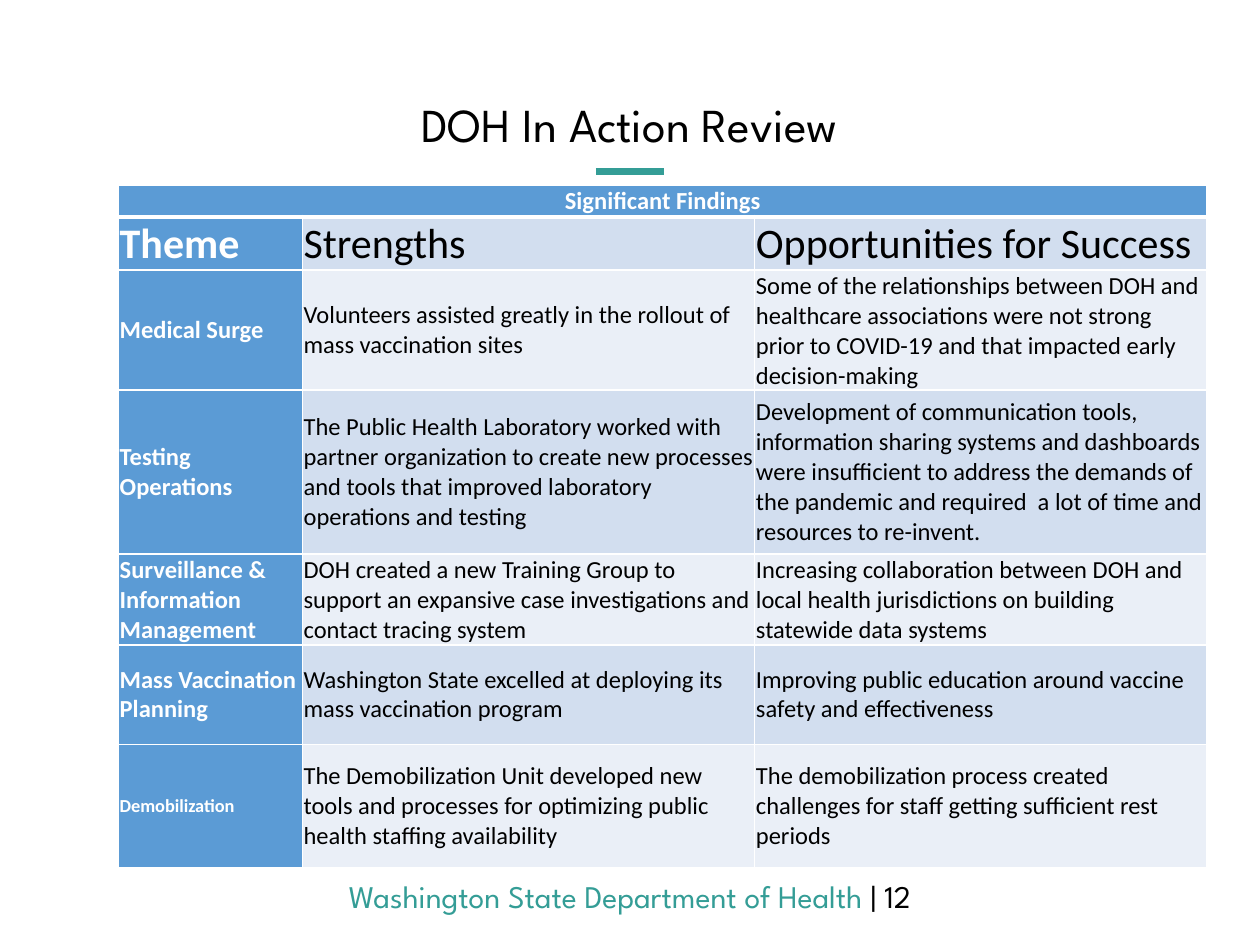
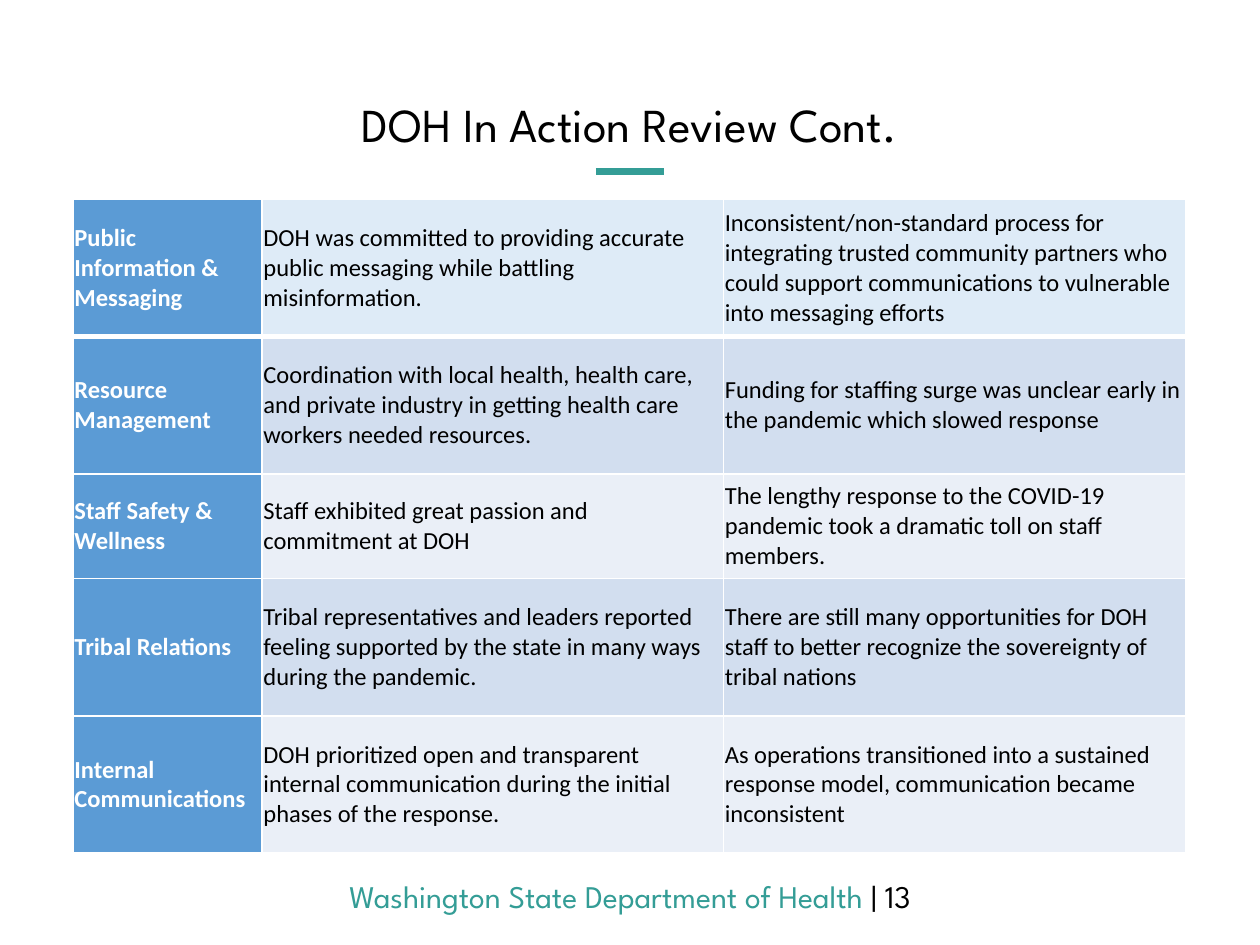
from lxml.etree import SubElement
from pptx import Presentation
from pptx.dml.color import RGBColor
from pptx.enum.shapes import MSO_CONNECTOR
from pptx.enum.text import MSO_ANCHOR, MSO_AUTO_SIZE, PP_ALIGN
from pptx.oxml.ns import qn
from pptx.util import Pt

TEAL = RGBColor(0x34, 0x9D, 0x96)
BLACK = RGBColor(0, 0, 0)
WHITE = RGBColor(0xFF, 0xFF, 0xFF)
THEME_BLUE = RGBColor(0x5B, 0x9B, 0xD5)
TOP_BLUE = RGBColor(0xDE, 0xEB, 0xF7)
BANDS = [RGBColor(0xEA, 0xEF, 0xF7), RGBColor(0xD2, 0xDE, 0xEF)]
HEADING_FONT = "League Spartan"
TABLE_FONT = "Calibri"
CELL_INSET = Pt(0.72)
CELL_FORMAT = {
    "margin_left": CELL_INSET, "margin_right": CELL_INSET,
    "margin_top": CELL_INSET, "margin_bottom": CELL_INSET,
}

REVIEWS = [
    {
        "title": "DOH In Action Review",
        "number": 12,
        "left": 67.7, "top": 105.8,
        "columns": [105.1, 258.5, 258.5],
        "heights": [17.3, 28.8, 65.5, 93.6, 49, 56.9, 70.6],
        "sizes": {"Theme": 24, "Strengths": 24, "Opportunities for Success": 24,
                  "Demobilization": 10.5},
        "findings": [
            ("Significant Findings", "", ""),
            ("Theme", "Strengths", "Opportunities for Success"),
            ("Medical Surge",
             "Volunteers assisted greatly in the rollout of mass vaccination sites",
             "Some of the relationships between DOH and healthcare associations were not "
             "strong prior to COVID-19 and that impacted early decision-making"),
            ("Testing Operations",
             "The Public Health Laboratory worked with partner organization to create new "
             "processes and tools that improved laboratory operations and testing",
             "Development of communication tools, information sharing systems and dashboards "
             "were insufficient to address the demands of the pandemic and required  a lot of "
             "time and resources to re-invent."),
            ("Surveillance & Information Management",
             "DOH created a new Training Group to support an expansive case investigations "
             "and contact tracing system",
             "Increasing collaboration between DOH and local health jurisdictions on building "
             "statewide data systems"),
            ("Mass Vaccination Planning",
             "Washington State excelled at deploying its mass vaccination program",
             "Improving public education around vaccine safety and effectiveness"),
            ("Demobilization",
             "The Demobilization Unit developed new tools and processes for optimizing public "
             "health staffing availability",
             "The demobilization process created challenges for staff getting sufficient rest "
             "periods"),
        ],
    },
    {
        "title": "DOH In Action Review Cont.",
        "number": 13,
        "left": 41.8, "top": 113.8,
        "columns": [108, 263.7, 264.2],
        "heights": [78.5, 78.5, 59.8, 78.5, 78.5],
        "sizes": {},
        "findings": [
            ("Public Information & Messaging",
             "DOH was committed to providing accurate public messaging while battling "
             "misinformation.",
             "Inconsistent/non-standard process for integrating trusted community partners who "
             "could support communications to vulnerable into messaging efforts"),
            ("Resource Management",
             "Coordination with local health, health care, and private industry in getting "
             "health care workers needed resources.",
             "Funding for staffing surge was unclear early in the pandemic which slowed "
             "response"),
            ("Staff Safety & Wellness",
             "Staff exhibited great passion and commitment at DOH",
             "The lengthy response to the COVID-19 pandemic took a dramatic toll on staff "
             "members."),
            ("Tribal Relations",
             "Tribal representatives and leaders reported feeling supported by the state in "
             "many ways during the pandemic.",
             "There are still many opportunities for DOH staff to better recognize the "
             "sovereignty of tribal nations"),
            ("Internal Communications",
             "DOH prioritized open and transparent internal communication during the initial "
             "phases of the response.",
             "As operations transitioned into a sustained response model, communication became "
             "inconsistent"),
        ],
    },
]


def add_run(paragraph, text, color, **font_format):
    run = paragraph.add_run()
    run.text = text
    run.font.color.rgb = color
    for attribute, value in font_format.items():
        setattr(run.font, attribute, value)


def add_borders(cell, top, bottom):
    """Draw white cell borders; top and bottom are widths in points."""
    for side, width in {"lnL": 1, "lnR": 1, "lnT": top, "lnB": bottom}.items():
        border = SubElement(cell._tc.get_or_add_tcPr(), qn(f"a:{side}"), w=str(Pt(width)))
        fill = SubElement(border, qn("a:solidFill"))
        SubElement(fill, qn("a:srgbClr"), val=str(WHITE))


prs = Presentation()
prs.slide_width, prs.slide_height = Pt(720), Pt(540)

for review in REVIEWS:
    slide = prs.slides.add_slide(prs.slide_layouts.get_by_name("Title Only"))

    accent = slide.shapes.add_connector(
        MSO_CONNECTOR.STRAIGHT, Pt(340.5), Pt(98), Pt(379.5), Pt(98))
    accent.line.color.rgb = TEAL
    accent.line.width = Pt(4)
    SubElement(accent._element.spPr, qn("a:effectLst"))

    footer = slide.shapes.add_textbox(Pt(0), Pt(497.5), Pt(720), Pt(28.8)).text_frame
    footer.word_wrap = True
    footer.paragraphs[0].alignment = PP_ALIGN.CENTER
    for text, color in [("Washington State Department of Health ", TEAL),
                        (f"| {review['number']}", BLACK)]:
        add_run(footer.paragraphs[0], text, color, name=HEADING_FONT, size=Pt(18))

    title = slide.shapes.title
    title.left, title.top, title.width, title.height = Pt(0), Pt(53.3), Pt(719.3), Pt(38.2)
    title.text_frame.auto_size = MSO_AUTO_SIZE.NONE
    title.text_frame.vertical_anchor = MSO_ANCHOR.MIDDLE
    heading = title.text_frame.paragraphs[0]
    heading.alignment = PP_ALIGN.CENTER
    heading.line_spacing = 0.9
    add_run(heading, review["title"], BLACK, name=HEADING_FONT, size=Pt(27))

    findings = review["findings"]
    table = slide.shapes.add_table(
        len(findings), 3, Pt(review["left"]), Pt(review["top"]),
        Pt(sum(review["columns"])), Pt(sum(review["heights"]))).table
    table.first_row = table.horz_banding = False
    for column, width in zip(table.columns, review["columns"]):
        column.width = Pt(width)
    for row, height in zip(table.rows, review["heights"]):
        row.height = Pt(height)

    for r, finding in enumerate(findings):
        for c, text in enumerate(finding):
            cell = table.cell(r, c)
            for attribute, value in CELL_FORMAT.items():
                setattr(cell, attribute, value)
            is_column_head = "Theme" in finding
            cell.vertical_anchor = MSO_ANCHOR.TOP if is_column_head else MSO_ANCHOR.MIDDLE
            add_borders(cell, top=3 if r == 1 else 1, bottom=3 if r == 0 else 1)
            cell.fill.solid()
            if c == 0:
                cell.fill.fore_color.rgb = THEME_BLUE
            else:
                cell.fill.fore_color.rgb = BANDS[r % 2] if r else TOP_BLUE
            if text:
                add_run(cell.text_frame.paragraphs[0], text, BLACK if c else WHITE,
                        name=TABLE_FONT, size=Pt(review["sizes"].get(text, 14)), bold=c == 0)

    if not any(findings[0][1:]):
        banner = table.cell(0, 0)
        banner.merge(table.cell(0, 2))
        banner.text_frame.paragraphs[0].alignment = PP_ALIGN.CENTER

prs.save("out.pptx")
